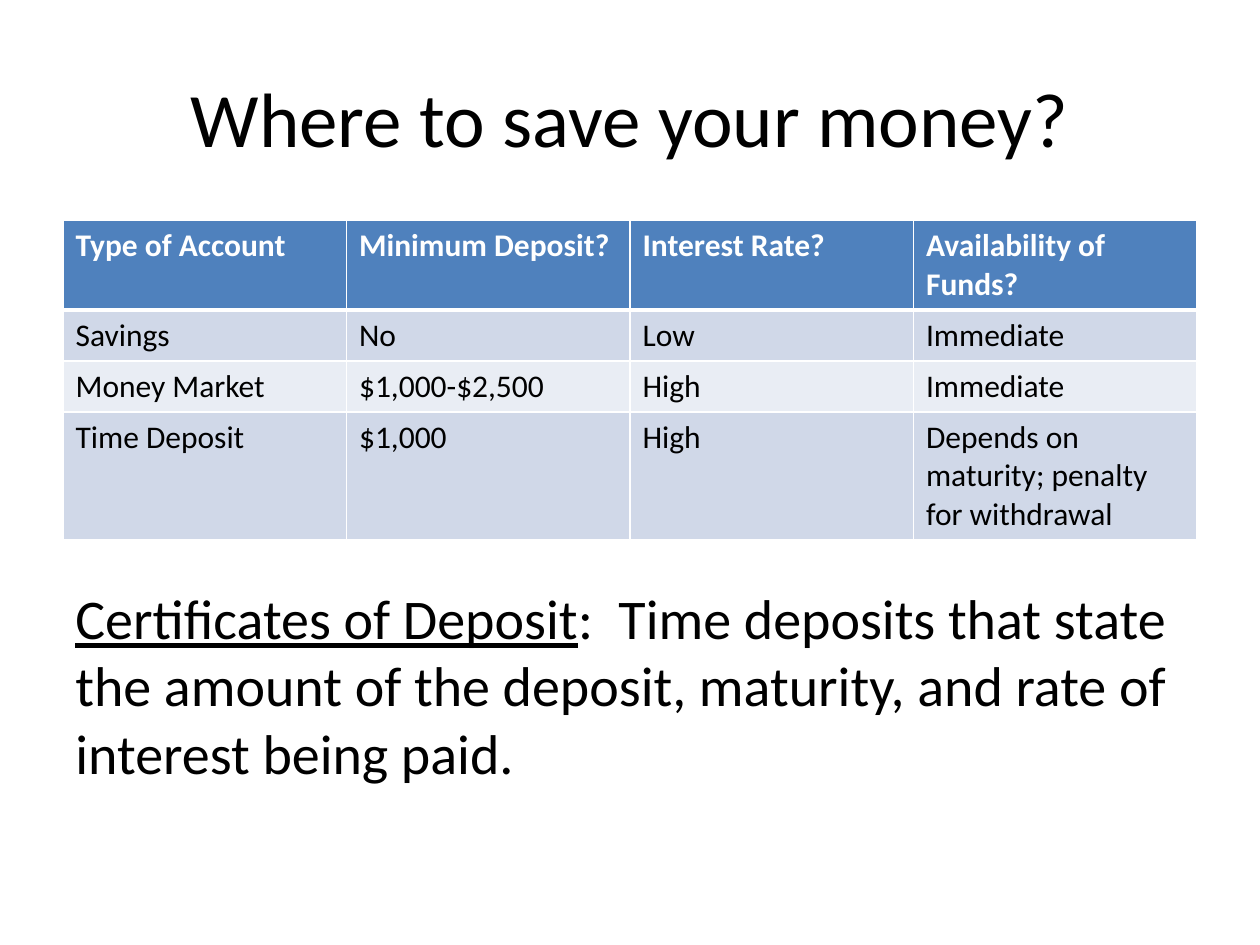
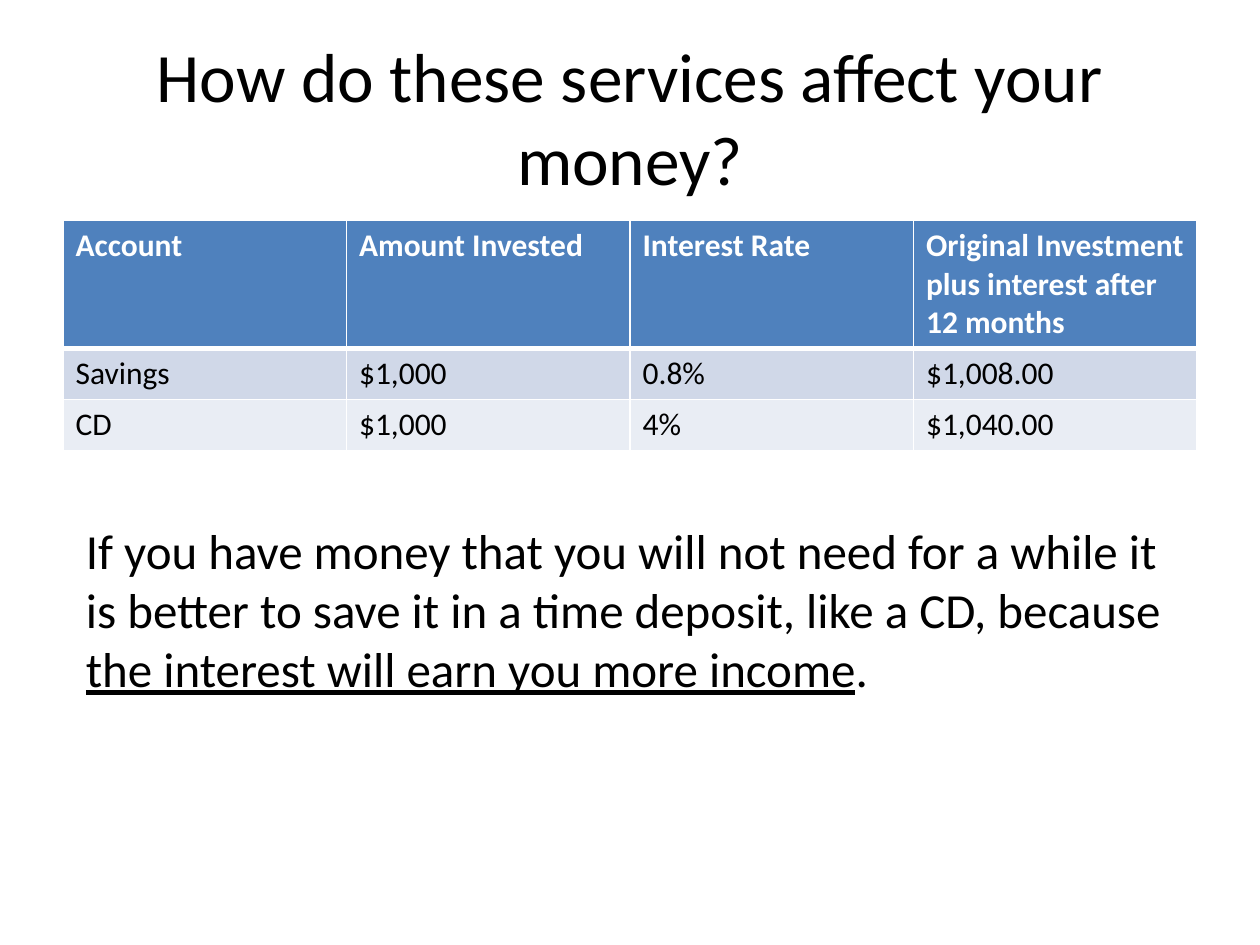
import pptx
import pptx.dml.color
import pptx.enum.text
import pptx.oxml.ns
import pptx.util
from lxml import etree

Pt = pptx.util.Pt
RGBColor = pptx.dml.color.RGBColor

# Shared look
BLACK = RGBColor(0x00, 0x00, 0x00)
WHITE = RGBColor(0xFF, 0xFF, 0xFF)
HEADER_BLUE = RGBColor(0x4F, 0x81, 0xBD)
BAND_COLORS = (RGBColor(0xD0, 0xD8, 0xE8), RGBColor(0xE9, 0xED, 0xF4))
FONT = "Calibri"
MARGIN = 36
CONTENT_WIDTH = 648
TABLE_TOP = 126
ROW_HEIGHT = 29.2
TITLE_ONLY = 5

# Content
ACCOUNT_TYPES = [
    ("Type of Account", "Minimum Deposit?", "Interest Rate?", "Availability of Funds?"),
    ("Savings", "No", "Low", "Immediate"),
    ("Money Market", "$1,000-$2,500", "High", "Immediate"),
    ("Time Deposit", "$1,000", "High", "Depends on maturity; penalty for withdrawal"),
]
EARNINGS = [
    ("Account", "Amount Invested", "Interest Rate",
     "Original Investment plus interest after 12 months"),
    ("Savings", "$1,000", "0.8%", "$1,008.00"),
    ("CD", "$1,000", "4%", "$1,040.00"),
]
# Each note part is (text, underlined)
CD_DEFINITION = [
    ("Certificates of Deposit", True),
    (":  Time deposits that state the amount of the deposit, maturity, "
     "and rate of interest being paid.", False),
]
SAVING_ADVICE = [
    ("If you have money that you will not need for a while it is better to "
     "save it in a time deposit, like a CD, because ", False),
    ("the interest will earn you more income", True),
    (".", False),
]


def add_run(paragraph, text, size, color=BLACK, bold=False, underline=False):
    run = paragraph.add_run()
    run.text = text
    run.font.name = FONT
    run.font.size = Pt(size)
    run.font.color.rgb = color
    run.font.bold = bold
    run.font.underline = underline


def place(shape, left, top, width, height):
    shape.left, shape.top = Pt(left), Pt(top)
    shape.width, shape.height = Pt(width), Pt(height)


def add_titled_slide(deck, text, size):
    slide = deck.slides.add_slide(deck.slide_layouts[TITLE_ONLY])
    title = slide.shapes.title
    place(title, MARGIN, 21.6, CONTENT_WIDTH, 90)
    frame = title.text_frame
    frame.auto_size = pptx.enum.text.MSO_AUTO_SIZE.NONE
    frame.vertical_anchor = pptx.enum.text.MSO_ANCHOR.MIDDLE
    frame.paragraphs[0].alignment = pptx.enum.text.PP_ALIGN.CENTER
    add_run(frame.paragraphs[0], text, size)
    return slide


def set_borders(cell, top=1, bottom=1):
    properties = cell._tc.get_or_add_tcPr()
    qn = pptx.oxml.ns.qn
    for side, width in (("L", 1), ("R", 1), ("T", top), ("B", bottom)):
        line = etree.SubElement(properties, qn(f"a:ln{side}"), w=str(Pt(width)))
        fill = etree.SubElement(line, qn("a:solidFill"))
        etree.SubElement(fill, qn("a:srgbClr"), val=str(WHITE))


def add_banded_table(slide, rows):
    table = slide.shapes.add_table(
        len(rows), len(rows[0]), Pt(MARGIN), Pt(TABLE_TOP),
        Pt(CONTENT_WIDTH), Pt(ROW_HEIGHT * len(rows))).table
    for row_index, row in enumerate(rows):
        is_header = row_index == 0
        for column_index, text in enumerate(row):
            cell = table.cell(row_index, column_index)
            # A thicker rule separates the header from the first row
            set_borders(cell, top=3 if row_index == 1 else 1,
                        bottom=3 if is_header else 1)
            cell.fill.solid()
            cell.fill.fore_color.rgb = (
                HEADER_BLUE if is_header else BAND_COLORS[(row_index - 1) % 2])
            add_run(cell.text_frame.paragraphs[0], text, 18,
                    WHITE if is_header else BLACK, bold=is_header)


def add_note(slide, parts, size, left, top, height):
    note = slide.shapes.add_textbox(Pt(left), Pt(top), Pt(642), Pt(height))
    note.text_frame.word_wrap = True
    for text, underline in parts:
        add_run(note.text_frame.paragraphs[0], text, size, underline=underline)


def main():
    deck = pptx.Presentation()
    deck.slide_width, deck.slide_height = Pt(720), Pt(540)

    # Account types
    slide = add_titled_slide(deck, "Where to save your money?", 44)
    add_banded_table(slide, ACCOUNT_TYPES)
    add_note(slide, CD_DEFINITION, 32, MARGIN, 330, 124)

    # Interest earned
    slide = add_titled_slide(deck, "How do these services affect your money?", 39.6)
    add_banded_table(slide, EARNINGS)
    add_note(slide, SAVING_ADVICE, 28, 42, 294, 109)

    deck.save("out.pptx")


if __name__ == "__main__":
    main()
